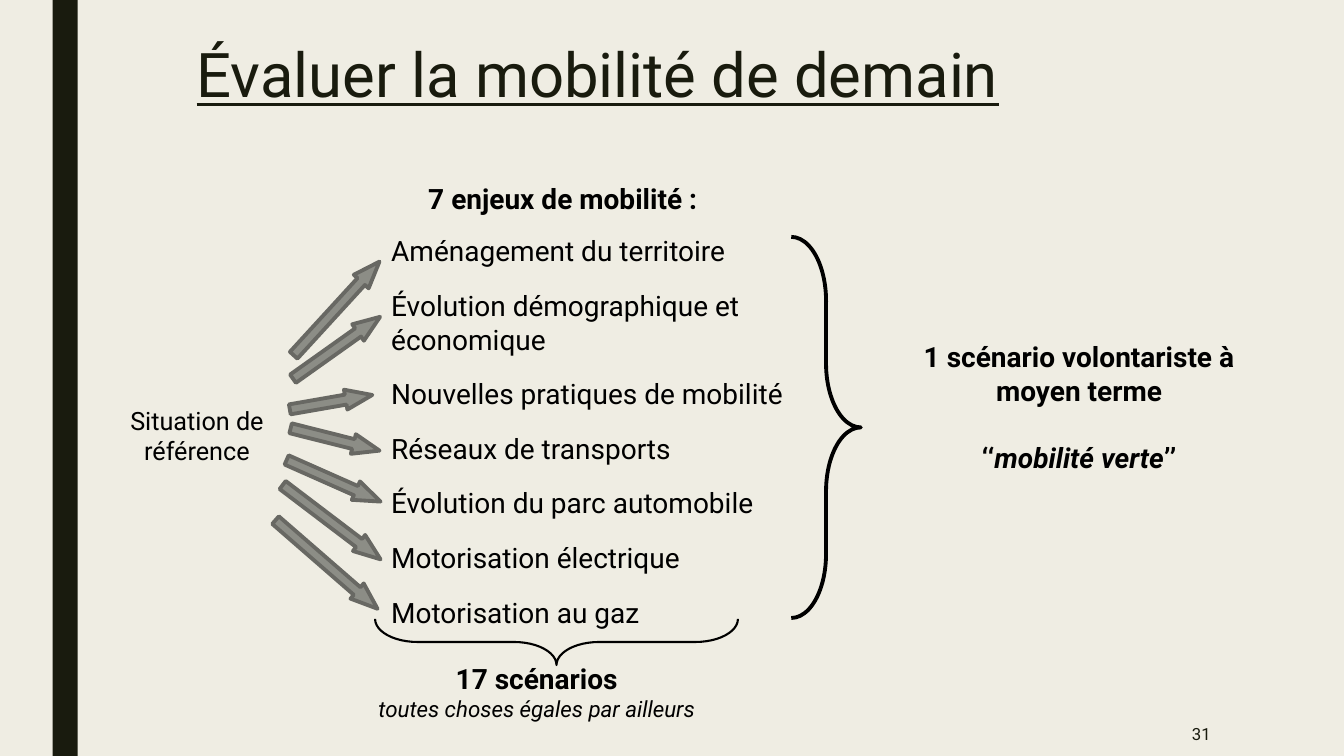
"""Builds the slide on the seven mobility issues and their scenarios."""
from dataclasses import dataclass

from lxml import etree
from pptx import Presentation
from pptx.dml.color import RGBColor
from pptx.enum.shapes import MSO_SHAPE
from pptx.enum.text import MSO_ANCHOR, MSO_AUTO_SIZE, PP_ALIGN
from pptx.oxml.ns import qn
from pptx.util import Pt

RECT, BRACE, ARROW = MSO_SHAPE.RECTANGLE, MSO_SHAPE.RIGHT_BRACE, MSO_SHAPE.RIGHT_ARROW
TOP, MIDDLE = MSO_ANCHOR.TOP, MSO_ANCHOR.MIDDLE
LEFT, CENTER, RIGHT = PP_ALIGN.LEFT, PP_ALIGN.CENTER, PP_ALIGN.RIGHT
NO_FIT = MSO_AUTO_SIZE.NONE


@dataclass(frozen=True)
class Theme:
    font: str = "Roboto"
    paper: str = "EFEDE3"
    dark: str = "191B0E"
    ink: str = "000000"
    arrow: str = "8C8D86"
    arrow_edge: str = "686863"
    title: int = 44
    text: int = 20
    label: int = 18
    note: int = 16
    number: int = 12


class SlideBuilder:
    def __init__(self, prs, theme):
        self.theme = theme
        self.s = prs.slides.add_slide(prs.slide_layouts[1])
        fill = self.s.background.fill
        fill.solid()
        fill.fore_color.rgb = RGBColor.from_string(theme.paper)

    def place(self, sp, box):
        for name, value in zip(("left", "top", "width", "height"), box):
            setattr(sp, name, Pt(value))

    def fill_text(self, sp, paragraphs, size, color, align=LEFT, anchor=TOP, gap=0, **fmt):
        """Fill a frame; each paragraph is a list of (text, format) runs."""
        tf = sp.text_frame
        frame = {"word_wrap": True, "auto_size": NO_FIT, "vertical_anchor": anchor}
        for name, value in frame.items():
            setattr(tf, name, value)
        for i, runs in enumerate(paragraphs):
            p = tf.paragraphs[0] if i == 0 else tf.add_paragraph()
            p.alignment = align
            p.space_before = Pt(gap if i else 0)
            for text, own in runs:
                r = p.add_run()
                r.text = text
                style = {"name": self.theme.font, "size": size, **fmt, **own}
                style["size"] = Pt(style["size"])
                for name, value in style.items():
                    setattr(r.font, name, value)
                r.font.color.rgb = RGBColor.from_string(color)
        return tf

    def title(self, text, box):
        sp = self.s.shapes.title
        self.place(sp, box)
        tf = self.fill_text(sp, [[(text, {})]], self.theme.title, self.theme.dark,
                            underline=True)
        tf.paragraphs[0].line_spacing = 0.89

    def issues(self, items, box, gap):
        sp = self.s.placeholders[1]
        self.place(sp, box)
        paragraphs = [[(item, {})] for item in items]
        tf = self.fill_text(sp, paragraphs, self.theme.text, self.theme.ink, gap=gap)
        for p in tf.paragraphs:
            pPr = p._p.get_or_add_pPr()
            pPr.set("marL", "0")
            pPr.set("indent", "0")
            etree.SubElement(pPr, qn("a:buNone"))

    def text(self, paragraphs, box, size, color=None, **kw):
        sp = self.s.shapes.add_textbox(*map(Pt, box))
        self.fill_text(sp, paragraphs, size, color or self.theme.ink, **kw)

    def shape(self, kind, box, fill=None, line=None, weight=0, rotation=0, adj=()):
        sp = self.s.shapes.add_shape(kind, *map(Pt, box))
        sp.shadow.inherit = False
        sp.rotation = rotation
        for i, value in enumerate(adj):
            sp.adjustments[i] = value
        if fill:
            sp.fill.solid()
            sp.fill.fore_color.rgb = RGBColor.from_string(fill)
        else:
            sp.fill.background()
        if line:
            sp.line.color.rgb = RGBColor.from_string(line)
            sp.line.width = Pt(weight)
        else:
            sp.line.fill.background()

    def brace(self, box, weight, rotation=0):
        self.shape(BRACE, box, line=self.theme.ink, weight=weight,
                   rotation=rotation, adj=(0.92, 0.5))

    def arrow(self, left, top, width, rotation):
        self.shape(ARROW, (left, top, width, 14.4), self.theme.arrow,
                   self.theme.arrow_edge, 2.75, rotation, (0.5, 1.34))


ISSUES = [
    "Aménagement du territoire",
    "Évolution démographique et économique",
    "Nouvelles pratiques de mobilité",
    "Réseaux de transports",
    "Évolution du parc automobile",
    "Motorisation électrique",
    "Motorisation au gaz",
]
ARROWS = [
    (195.1, 213.1, 90.7, 312.5),
    (202.3, 241.2, 76.3, 324.6),
    (206.6, 280.1, 59.8, 350.1),
    (206.6, 306.7, 65.5, 14.1),
    (201.6, 336.2, 73.4, 23.9),
    (193, 365.8, 87.8, 37.2),
    (185, 396, 96.5, 41),
]


def main():
    prs = Presentation()
    prs.slide_width, prs.slide_height = Pt(960), Pt(540)
    t = Theme()
    b = SlideBuilder(prs, t)

    b.shape(RECT, (37.5, 0, 18, 540), t.dark)
    b.title("Évaluer la mobilité de demain", (133.2, 28.8, 756, 60.5))
    b.text([[("31", {})]], (746, 508.3, 126, 31.7), t.number, t.dark,
           align=RIGHT, anchor=MIDDLE)

    b.text([[("Situation de référence", {})]], (82, 285.8, 117.4, 51), t.label, align=CENTER)
    b.text([[("7 enjeux de mobilité :", {})]], (298.8, 126, 237, 31.7), t.text, bold=True)
    b.issues(ISSUES, (272.2, 163.4, 329.8, 288.7), gap=15)
    for arrow in ARROWS:
        b.arrow(*arrow)

    b.brace((381, 329, 33, 259.2), 1.5, rotation=90)
    b.text([[("17 scénarios", {"bold": True})],
            [("toutes choses égales par ailleurs", {"size": t.note, "italic": True})]],
           (230.4, 468.7, 306, 51), t.text, align=CENTER)

    b.brace((565.2, 169.2, 49.7, 272.2), 2.75)
    b.text([[("1 scénario volontariste à moyen terme", {})],
            [("‘‘", {}), ("mobilité verte", {"italic": True}), ("’’", {})]],
           (652.3, 239, 237, 104.4), t.text, align=CENTER, gap=24, bold=True)

    prs.save("out.pptx")


if __name__ == "__main__":
    main()
